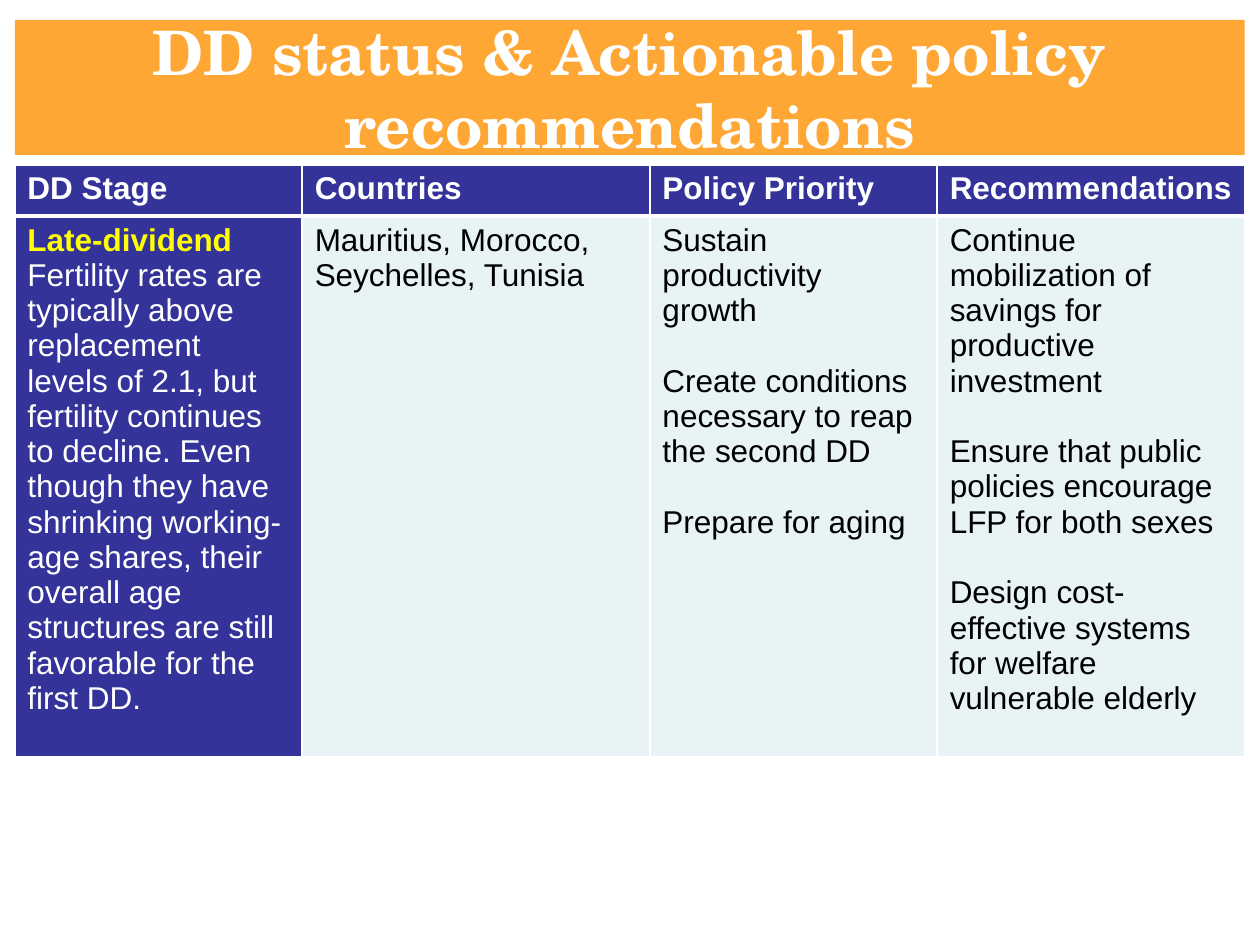
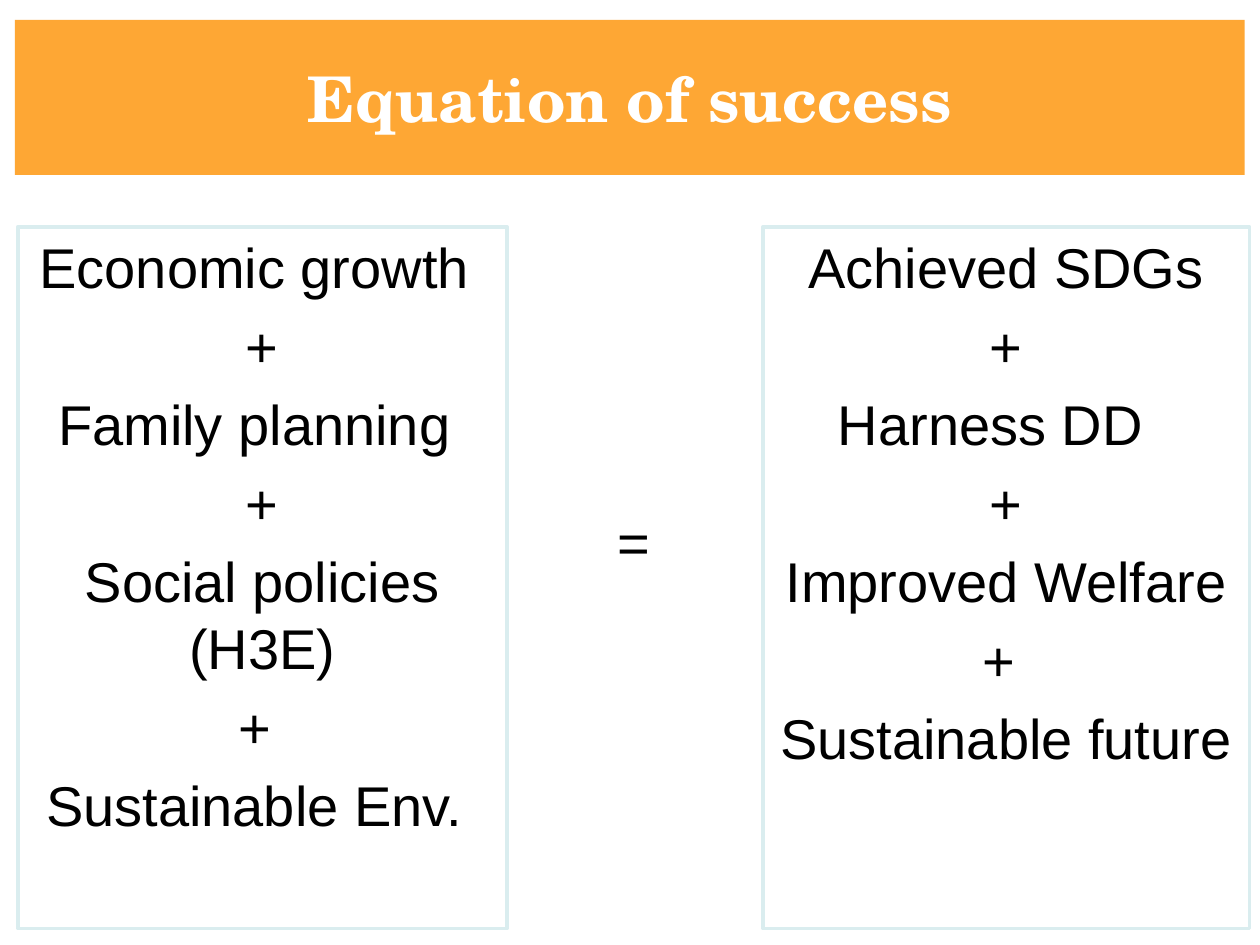
from pptx import Presentation
from pptx.dml.color import RGBColor
from pptx.enum.shapes import MSO_SHAPE
from pptx.enum.text import MSO_ANCHOR, PP_ALIGN
from pptx.oxml.ns import qn
from pptx.util import Pt
from lxml.etree import SubElement

# Content: table cells are lists of paragraphs
HEADS = ["DD Stage", "Countries", "Policy Priority", "Recommendations"]
STAGE = [
    "Late-dividend",
    "Fertility rates are typically above replacement levels of 2.1, but "
    "fertility continues to decline. Even though they have shrinking "
    "working-age shares, their overall age structures are still favorable "
    "for the first DD.",
]
CELLS = [
    ["Mauritius, Morocco, Seychelles, Tunisia"],
    ["Sustain productivity growth",
     "Create conditions necessary to reap the second DD",
     "Prepare for aging"],
    ["Continue mobilization of savings for productive investment",
     "Ensure that public policies encourage LFP for both sexes",
     "Design cost-effective systems for welfare vulnerable elderly"],
]
# Equation terms with their right indent
CAUSES = [("Economic growth", 9), ("+", 0), ("Family planning", 9), ("+", 0),
          ("Social policies (H3E)", 0), ("+", 9), ("Sustainable Env.", 9)]
GAINS = [("Achieved SDGs", 0), ("+", 0), ("Harness DD", 18), ("+", 0),
         ("Improved Welfare", 0), ("+", 9), ("Sustainable future", 0)]

# Shared look
HUES = {"band": "FEA734", "navy": "333399", "pale": "E7F3F4", "edge": "DAEDEF",
        "white": "FFFFFF", "black": "000000", "yellow": "FFFF00"}
SANS, SERIF = "Arial", "TeX Gyre Schola"
LEFT, TOP, WIDTH = 8.5, 11.3, 702.72
COLS = [164.16, 198.72, 164.16, 175.68]
ROWS = [29.2, 309]


def hue(name):
    return RGBColor.from_string(HUES[name])


def write(frame, text, size=18, font=SANS, color="black", bold=False,
          align=PP_ALIGN.LEFT, first=False, gap=0, right=0):
    """Add one paragraph; the first one of a frame takes no gap."""
    para = frame.paragraphs[0] if first else frame.add_paragraph()
    para.alignment = align
    para.space_before = Pt(0 if first else gap)
    para._p.get_or_add_pPr().set("marR", str(Pt(right)))
    run = para.add_run()
    run.text = text
    run.font.size, run.font.name, run.font.bold = Pt(size), font, bold
    run.font.color.rgb = hue(color)


def box(slide, x, y, w, h, fill, edge=None):
    shape = slide.shapes.add_shape(MSO_SHAPE.RECTANGLE, Pt(x), Pt(y), Pt(w), Pt(h))
    shape.shadow.inherit = False
    shape.fill.solid()
    shape.fill.fore_color.rgb = hue(fill)
    if edge:
        shape.line.color.rgb = hue(edge)
        shape.line.width = Pt(2)
    else:
        shape.line.fill.background()
    shape.text_frame.word_wrap = True
    return shape.text_frame


def start(deck, title, size, height):
    """New slide with the title band."""
    slide = deck.slides.add_slide(deck.slide_layouts[6])
    frame = box(slide, LEFT, TOP, WIDTH, height, "band")
    frame.vertical_anchor = MSO_ANCHOR.MIDDLE
    write(frame, title, size=size, font=SERIF, color="white", bold=True,
          align=PP_ALIGN.CENTER, first=True)
    return slide


def paint(cell, fill, base):
    """Cell borders, then fill, in the order the format asks for."""
    props = cell._tc.get_or_add_tcPr()
    for side, width in (("L", 1), ("R", 1), ("T", 1), ("B", base)):
        line = SubElement(props, qn(f"a:ln{side}"), w=str(Pt(width)))
        solid = SubElement(line, qn("a:solidFill"))
        SubElement(solid, qn("a:srgbClr"), val=HUES["white"])
    cell.fill.solid()
    cell.fill.fore_color.rgb = hue(fill)


def policy(deck):
    slide = start(deck, "DD status & Actionable policy recommendations", 35, 77.2)
    grid = slide.shapes.add_table(2, 4, Pt(LEFT), Pt(94.3), Pt(WIDTH),
                                  Pt(sum(ROWS))).table
    for part, size in zip(grid.rows, ROWS):
        part.height = Pt(size)
    for part, size in zip(grid.columns, COLS):
        part.width = Pt(size)

    # Header row
    for col, head in enumerate(HEADS):
        cell = grid.cell(0, col)
        paint(cell, "navy", 3)
        write(cell.text_frame, head, color="white", bold=True, first=True)

    # Stage column
    cell = grid.cell(1, 0)
    paint(cell, "navy", 1)
    write(cell.text_frame, STAGE[0], color="yellow", bold=True, first=True)
    write(cell.text_frame, STAGE[1], color="white")

    # Other columns
    for col, paras in enumerate(CELLS, 1):
        cell = grid.cell(1, col)
        paint(cell, "pale", 1)
        for i, text in enumerate(paras):
            write(cell.text_frame, text, first=i == 0, gap=20.2)


def equation(deck):
    slide = start(deck, "Equation of success", 36, 88.7)
    for x, w, terms in ((10.2, 279.5, CAUSES), (436, 278, GAINS)):
        frame = box(slide, x, 129.6, w, 401, "white", edge="edge")
        frame.vertical_anchor = MSO_ANCHOR.TOP
        for i, (text, right) in enumerate(terms):
            write(frame, text, size=32, align=PP_ALIGN.CENTER, first=i == 0,
                  gap=6.4, right=right)

    # Equals sign between the boxes
    sign = slide.shapes.add_textbox(Pt(292.7), Pt(286.6), Pt(139), Pt(46))
    sign.text_frame.word_wrap = True
    write(sign.text_frame, "=", size=32, align=PP_ALIGN.CENTER, first=True)


def main():
    deck = Presentation()
    deck.slide_width, deck.slide_height = Pt(720), Pt(540)
    policy(deck)
    equation(deck)
    deck.save("out.pptx")


if __name__ == "__main__":
    main()
